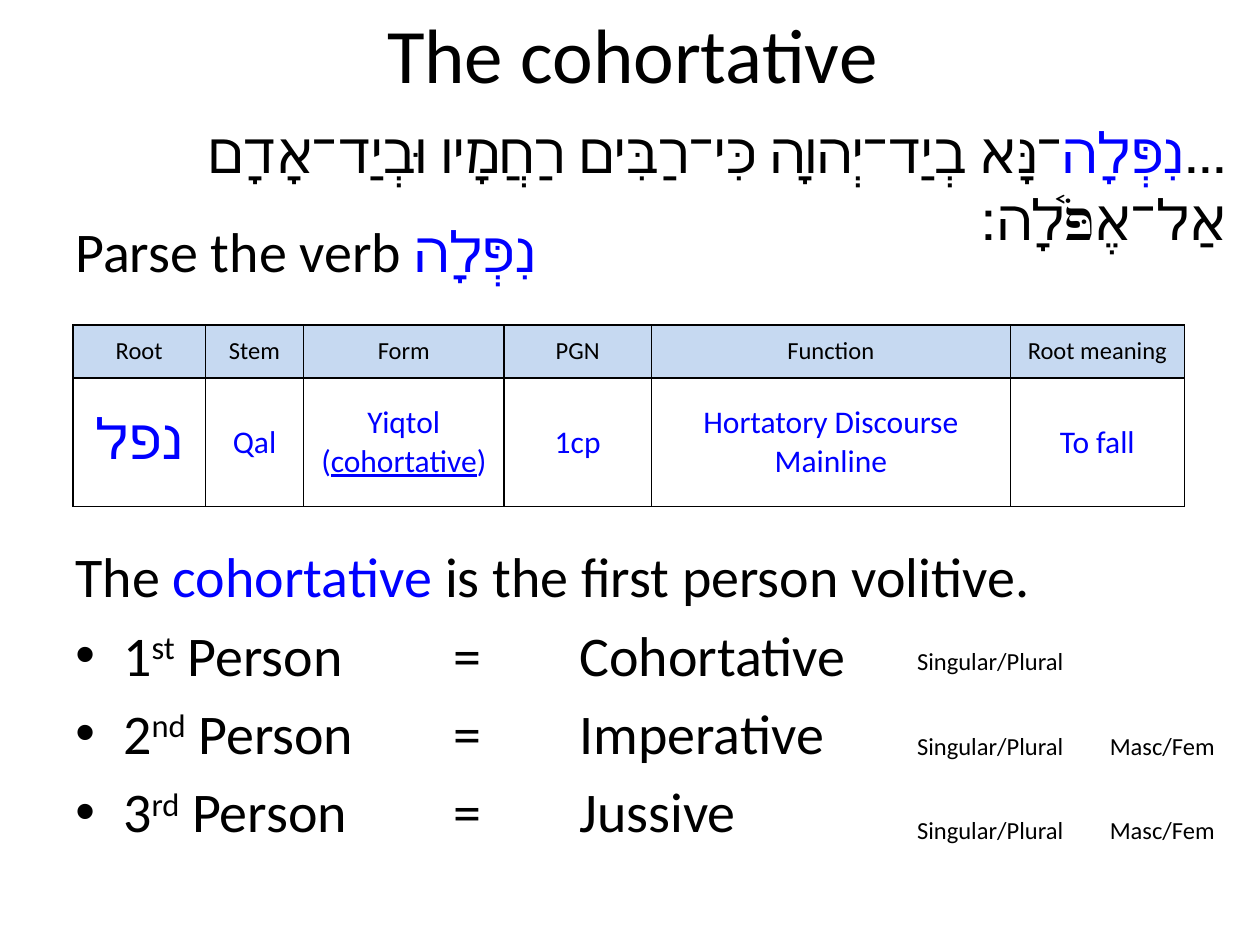
from lxml import etree
from pptx import Presentation
from pptx.dml.color import RGBColor
from pptx.enum.lang import MSO_LANGUAGE_ID
from pptx.enum.text import MSO_ANCHOR, PP_ALIGN
from pptx.oxml.ns import qn
from pptx.util import Inches, Pt

LEFT, MID, RIGHT = PP_ALIGN.LEFT, PP_ALIGN.CENTER, PP_ALIGN.RIGHT
CENTER = MSO_ANCHOR.MIDDLE
HEBREW = MSO_LANGUAGE_ID.HEBREW
BLACK, BLUE, HEAD = "000000", "0000FF", "C6D9F1"
FONT = "Calibri"

TITLE = "The cohortative"
VERB = ("נִפְּלָה", {"color": BLUE})
VERSE = [
    "...\t",
    VERB,
    "־נָּא בְיַד־יְהוָה כִּי־רַבִּים רַחֲמָיו וּבְיַד־אָדָם אַל־אֶ",
    ("פֹּ֫", {"lang": HEBREW}),
    "לָה׃",
]
TASK = ["Parse the verb ", VERB]
RULE = ["The ", ("cohortative ", {"color": BLUE}), "is the first person volitive."]
MOODS = [
    ("1", "st", "Cohortative", ["Singular/Plural"]),
    ("2", "nd", "Imperative", ["Singular/Plural", "Masc/Fem"]),
    ("3", "rd", "Jussive", ["Singular/Plural", "Masc/Fem"]),
]
COLS = [
    ("Root", 1.05, [["נפל"]]),
    ("Stem", 0.78, [["Qal"]]),
    ("Form", 1.59, [["Yiqtol"], ["(", ("cohortative", {"line": True}), ")"]]),
    ("PGN", 1.17, [["1cp"]]),
    ("Function", 2.85, [["Hortatory Discourse"], ["Mainline"]]),
    ("Root meaning", 1.38, [["To fall"]]),
]
ROWS = [0.42, 1.02]
TABS = [3, 4]
NOTES = [(7.18, 1.38), (8.71, 1.04)]


def rgb(code):
    """Turn a hex string into a colour."""
    return RGBColor.from_string(code)


def add(node, tag, **attrs):
    """Append a child element with attributes."""
    return etree.SubElement(node, qn(tag), attrs)


def write(para, runs, size, color=BLACK, align=LEFT, gap=False, rtl=False, dot=False):
    """Fill one paragraph with styled runs."""
    para.alignment = align
    props = para._p.get_or_add_pPr()
    if rtl:
        props.set("rtl", "1")
    if gap:
        add(add(props, "a:spcBef"), "a:spcPct", val="20000")
    if dot:
        props.set("marL", str(Inches(0.38)))
        props.set("indent", str(-Inches(0.38)))
        add(props, "a:buFont", typeface="Arial")
        add(props, "a:buChar", char="•")
        stops = add(props, "a:tabLst")
        for tab in TABS:
            add(stops, "a:tab", pos=str(Inches(tab)), algn="l")
    for item in runs:
        text, look = item if isinstance(item, tuple) else (item, {})
        run = para.add_run()
        run.text = text
        font = run.font
        font.size, font.name = Pt(size), FONT
        font.color.rgb = rgb(look.get("color", color))
        if look.get("line"):
            font.underline = True
        if look.get("up"):
            font._element.set("baseline", "30000")
        if look.get("lang"):
            font.language_id = look["lang"]


def box(slide, left, top, width, height, wrap=True):
    """Add a text box and return its frame."""
    shape = slide.shapes.add_textbox(*map(Inches, (left, top, width, height)))
    shape.text_frame.word_wrap = wrap
    return shape.text_frame


def fill_cell(cell, lines, size, color, shade=None, rtl=False):
    """Write, shade and frame one table cell."""
    cell.vertical_anchor = CENTER
    frame = cell.text_frame
    for i, runs in enumerate(lines):
        para = frame.add_paragraph() if i else frame.paragraphs[0]
        write(para, runs, size, color, MID, rtl=rtl)
    props = cell._tc.get_or_add_tcPr()
    for side in "LRTB":
        edge = add(props, "a:ln" + side, w=str(Pt(1)))
        add(add(edge, "a:solidFill"), "a:srgbClr", val=BLACK)
    if shade:
        cell.fill.solid()
        cell.fill.fore_color.rgb = rgb(shade)
    else:
        cell.fill.background()


def add_grid(slide):
    """Add the parsing table."""
    width = sum(col[1] for col in COLS)
    area = map(Inches, (0.58, 2.58, width, sum(ROWS)))
    table = slide.shapes.add_table(len(ROWS), len(COLS), *area).table
    for row, height in zip(table.rows, ROWS):
        row.height = Inches(height)
    for i, (name, width, lines) in enumerate(COLS):
        table.columns[i].width = Inches(width)
        fill_cell(table.cell(0, i), [[name]], 14, BLACK, HEAD)
        root = name == "Root"
        fill_cell(table.cell(1, i), lines, 32 if root else 18, BLUE, rtl=root)


def main():
    """Build the slide and save it."""
    deck = Presentation()
    deck.slide_width, deck.slide_height = Inches(10), Inches(7.5)
    slide = deck.slides.add_slide(deck.slide_layouts[6])

    title = box(slide, 0.52, 0, 9, 0.83)
    title.vertical_anchor = CENTER
    write(title.paragraphs[0], [TITLE], 44, align=MID)
    task = box(slide, 0.5, 1.67, 9, 0.75)
    write(task.paragraphs[0], TASK, 32, gap=True)
    verse = box(slide, 0.33, 0.88, 9.5, 0.71)
    write(verse.paragraphs[0], VERSE, 32, align=RIGHT, gap=True, rtl=True)
    add_grid(slide)

    body = box(slide, 0.5, 4.25, 9, 2.83)
    write(body.paragraphs[0], RULE, 32, gap=True)
    for i, (num, end, mood, notes) in enumerate(MOODS):
        runs = [num, (end, {"up": True}), f" Person\t=\t{mood}"]
        write(body.add_paragraph(), runs, 32, gap=True, dot=True)
        for note, (left, width) in zip(notes, NOTES):
            frame = box(slide, left, 5.08 + i * 0.67, width, 0.34, wrap=False)
            write(frame.paragraphs[0], [note], 14)
    deck.save("out.pptx")


if __name__ == "__main__":
    main()
